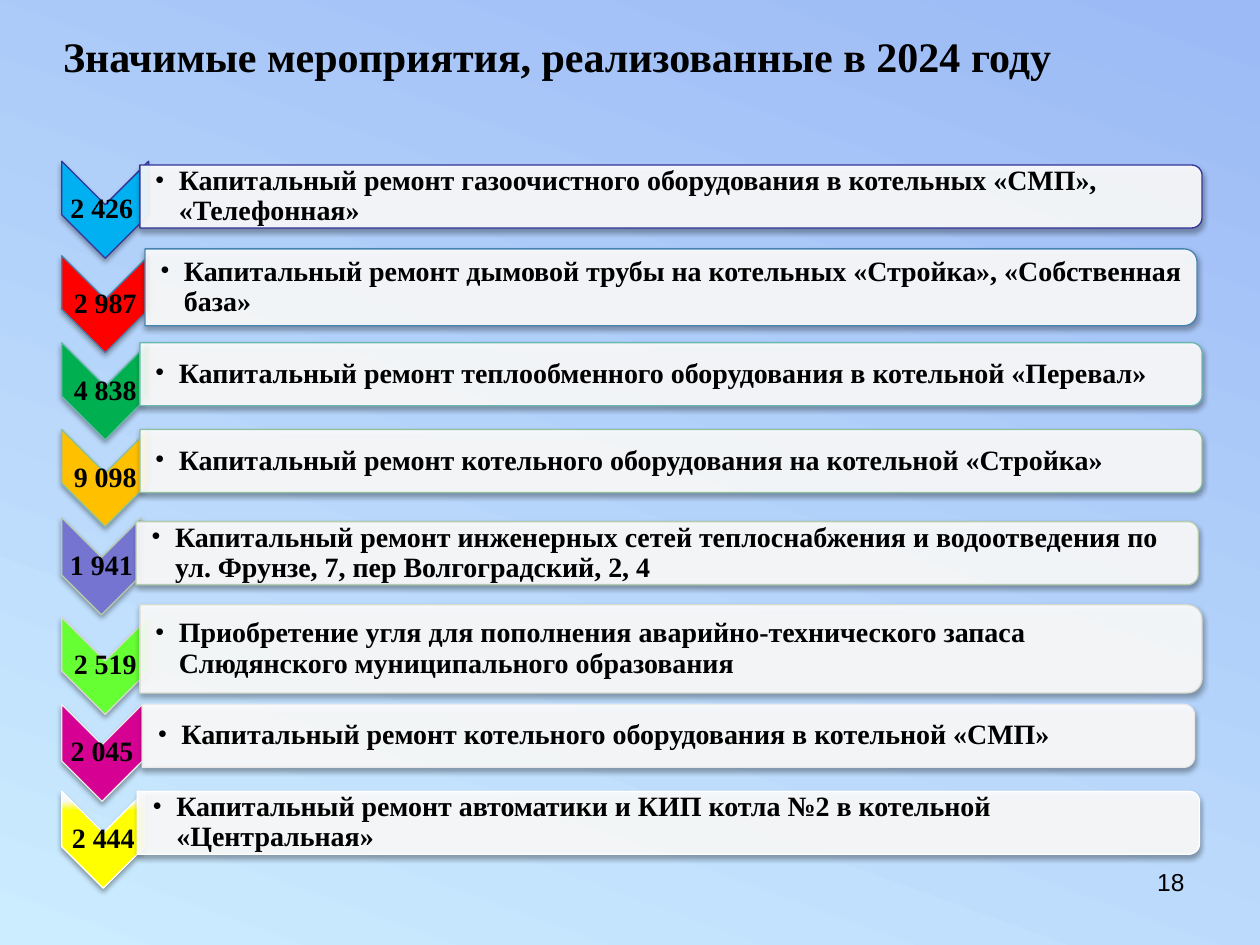
from lxml import etree
from pptx import Presentation
from pptx import util as u
from pptx.dml.color import RGBColor
from pptx.enum import shapes, text
from pptx.oxml.ns import qn

THEME = {
    "serif": "Times New Roman", "sans": "Arial",
    "title_pt": 24, "body_pt": 16, "number_pt": 14,
    "ink": "000000", "bar": "FFFFFF",
    "bg": [(0, "CCECFF"), (0.99, "9CBAF5")],
    "yellow": [(0.8, "FFFF00"), (0.9, "F8F8F8")],
}
CHEVRON_LEFT, CHEVRON_H = 0.49, 0.77

# amount, chevron top, chevron width, chevron fill, line,
# bar left, bar middle, bar width, bar height, description
ROWS = [
    ("2 426 ", 1.28, 0.69, "00B0F0", "333399", 1.11, 1.56, 8.43, 0.5,
     "Капитальный ремонт газоочистного оборудования в котельных «СМП», «Телефонная»"),
    ("2 987", 2.03, 0.69, "FF0000", "4783B1", 1.15, 2.28, 8.35, 0.61,
     "Капитальный ремонт дымовой трубы на котельных «Стройка», «Собственная база»"),
    ("4 838", 2.72, 0.69, "00B050", "6BB9AE", 1.11, 2.97, 8.43, 0.5,
     "Капитальный ремонт теплообменного оборудования в котельной «Перевал»"),
    ("9 098", 3.41, 0.69, "FFC000", "8FC19D", 1.11, 3.66, 8.43, 0.5,
     "Капитальный ремонт котельного оборудования на котельной «Стройка»"),
    ("1 941", 4.11, 0.63, "7575D1", "B7CBAF", 1.08, 4.39, 8.43, 0.5,
     "Капитальный ремонт инженерных сетей теплоснабжения и водоотведения по ул. Фрунзе, 7, пер Волгоградский, 2, 4"),
    ("2 519", 4.9, 0.69, "66FF33", "D8DACD", 1.11, 5.15, 8.43, 0.7,
     "Приобретение угля для пополнения аварийно-технического запаса Слюдянского муниципального образования"),
    ("2 045", 5.59, 0.64, "D60093", "EBE9E8", 1.13, 5.84, 8.35, 0.5,
     "Капитальный ремонт котельного оборудования в котельной «СМП»"),
    ("2 444", 6.28, 0.66, None, "FFFFFF", 1.09, 6.53, 8.43, 0.5,
     "Капитальный ремонт автоматики и КИП котла №2 в котельной «Центральная»"),
]


def write(sp, words, size, align, font=THEME["serif"], bold=True, insets=(0, 0, 0, 0),
          anchor=text.MSO_ANCHOR.MIDDLE):
    tf = sp.text_frame
    tf.word_wrap = True
    tf.auto_size = text.MSO_AUTO_SIZE.NONE
    tf.vertical_anchor = anchor
    tf.margin_left, tf.margin_top, tf.margin_right, tf.margin_bottom = map(u.Inches, insets)
    tf.text = words
    p = tf.paragraphs[0]
    p.alignment = align
    f = p.runs[0].font
    f.name, f.size, f.bold = font, u.Pt(size), bold
    f.color.rgb = RGBColor.from_string(THEME["ink"])
    return p


def add_turned(kind, left, middle, width, height, line):
    """Shape turned 90 degrees; left, middle, width and height are as seen."""
    sp = s.shapes.add_shape(kind, u.Inches(left + (width - height) / 2),
                            u.Inches(middle - width / 2), u.Inches(height), u.Inches(width))
    sp.rotation = 90
    sp.line.color.rgb = RGBColor.from_string(line)
    sp.line.width = u.Pt(0.75)
    sp.shadow.inherit = False
    effects = sp._element.spPr.find(qn("a:effectLst"))
    shadow = etree.SubElement(effects, qn("a:outerShdw"), blurRad=str(u.Pt(3.1)),
                              dist=str(u.Pt(1.8)), dir="5400000", rotWithShape="0")
    color = etree.SubElement(shadow, qn("a:srgbClr"), val=THEME["ink"])
    etree.SubElement(color, qn("a:alpha"), val="35000")
    return sp


prs = Presentation()
prs.slide_width, prs.slide_height = u.Inches(10), u.Inches(7.5)
s = prs.slides.add_slide(prs.slide_layouts[5])

# Background
bg = s.background.fill
bg.gradient()
bg.gradient_angle = 70
for stop, (pos, color) in zip(bg.gradient_stops, THEME["bg"]):
    stop.position, stop.color.rgb = pos, RGBColor.from_string(color)

# Title and slide number
title = s.shapes.title
title.left, title.top, title.width, title.height = map(u.Inches, (0.5, 0.1, 9, 0.69))
write(title, "Значимые мероприятия, реализованные в 2024 году", THEME["title_pt"],
      text.PP_ALIGN.LEFT)
number = s.shapes.add_textbox(*map(u.Inches, (7.17, 6.83, 2.33, 0.52)))
write(number, "18", THEME["number_pt"], text.PP_ALIGN.RIGHT, THEME["sans"], False,
      (0.1, 0.05, 0.1, 0.05), text.MSO_ANCHOR.TOP)

# One chevron with an amount and one bar with a description per row
for amount, top, cw, fill, line, left, middle, bw, bh, words in ROWS:
    c_mid = top + CHEVRON_H / 2
    chevron = add_turned(shapes.MSO_SHAPE.CHEVRON, CHEVRON_LEFT, c_mid, cw, CHEVRON_H, line)
    if fill:
        chevron.fill.solid()
        chevron.fill.fore_color.rgb = RGBColor.from_string(fill)
    else:
        # The gradient turns with the shape, so it ends at the top
        chevron.fill.gradient()
        chevron.fill.gradient_angle = 180
        for stop, (pos, color) in zip(chevron.fill.gradient_stops, THEME["yellow"]):
            stop.position, stop.color.rgb = pos, RGBColor.from_string(color)

    label = s.shapes.add_textbox(u.Inches(CHEVRON_LEFT), u.Inches(c_mid - 0.05),
                                 u.Inches(cw), u.Inches(0.1))
    p = write(label, amount, THEME["body_pt"], text.PP_ALIGN.CENTER, insets=(0.01,) * 4)
    p.line_spacing = 0.9

    bar = add_turned(shapes.MSO_SHAPE.ROUND_2_SAME_RECTANGLE, left, middle, bw, bh, line)
    bar.fill.solid()
    bar.fill.fore_color.rgb = RGBColor.from_string(THEME["bar"])
    color = bar._element.spPr.find(qn("a:solidFill"))[0]
    etree.SubElement(color, qn("a:alpha"), val="90000")

    box_h = bh - 0.05
    box = s.shapes.add_textbox(u.Inches(left), u.Inches(middle - box_h / 2),
                               u.Inches(bw - 0.03), u.Inches(box_h))
    p = write(box, words, THEME["body_pt"], text.PP_ALIGN.LEFT,
              insets=(0.12, 0.01, 0.01, 0.01))
    p.line_spacing = 0.9
    pPr = p._p.get_or_add_pPr()
    pPr.set("marL", str(u.Inches(0.19)))
    pPr.set("indent", str(-u.Inches(0.19)))
    etree.SubElement(pPr, qn("a:buFont"), typeface=THEME["serif"])
    etree.SubElement(pPr, qn("a:buChar"), char="•")

prs.save("out.pptx")
